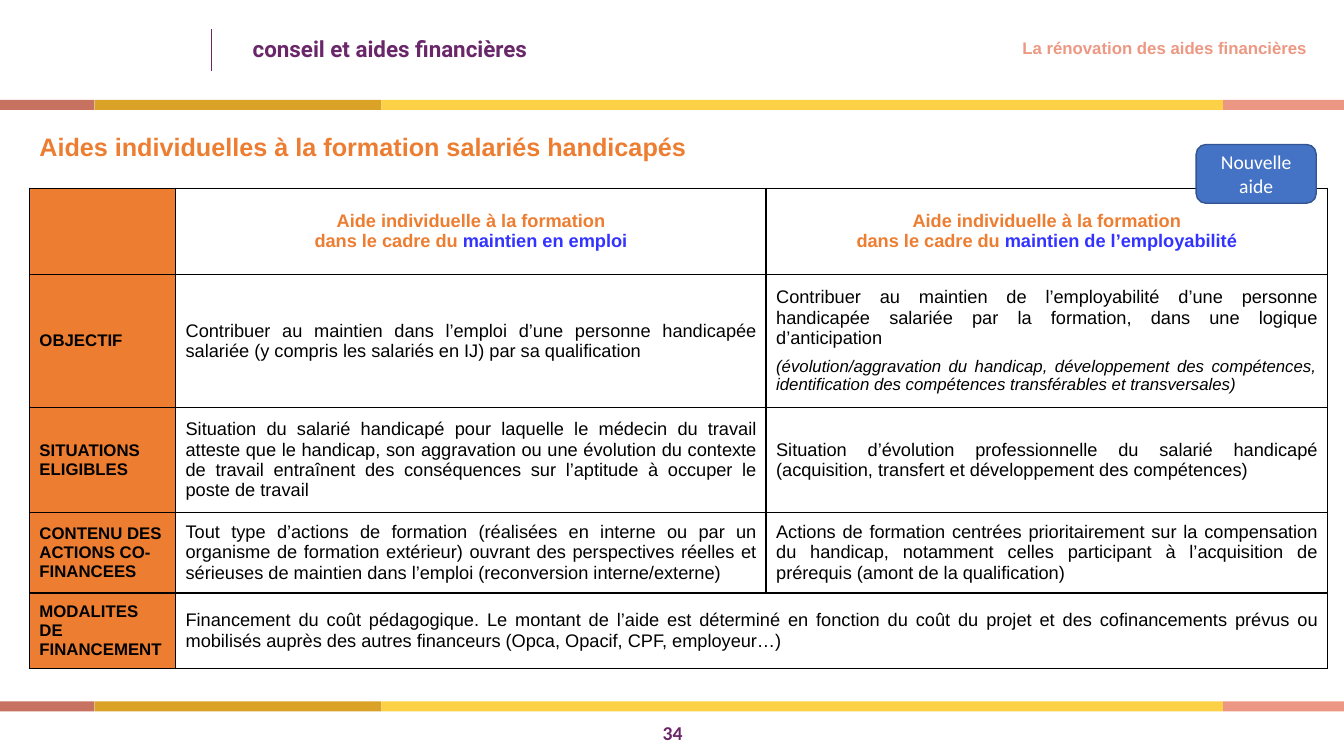
from dataclasses import dataclass, replace
from itertools import pairwise

from lxml.etree import SubElement
from pptx import Presentation
from pptx.dml.color import RGBColor
from pptx.enum.shapes import MSO_CONNECTOR, MSO_SHAPE
from pptx.enum.text import MSO_ANCHOR, PP_ALIGN
from pptx.oxml.ns import qn
from pptx.util import Inches, Pt


@dataclass(frozen=True)
class Style:
    size: float
    color: str
    font: str = "Arial"
    bold: bool = False
    italic: bool = False
    align: PP_ALIGN = PP_ALIGN.LEFT
    line_spacing: float = 1.0
    space_before: float = 0


class Theme:
    PURPLE = "69276A"
    ORANGE = "ED7D31"
    BLUE = "3333FF"
    BLACK = "000000"
    BUTTON, BUTTON_EDGE = "4472C4", "325491"
    BANDS = ("C77160", "DAA226", "FCD145", "EC9783")

    SECTION = Style(16, PURPLE, "Roboto", bold=True, line_spacing=0.9)
    PAGE = Style(14, PURPLE, "Calibri", bold=True, line_spacing=0.9)
    TOPIC = Style(12, "EC9883", bold=True, align=PP_ALIGN.RIGHT, line_spacing=0.9)
    TITLE = Style(18, ORANGE, bold=True)
    BADGE = Style(14, "FFFFFF", "Calibri", align=PP_ALIGN.CENTER)
    HEADING = Style(13, ORANGE, bold=True, align=PP_ALIGN.CENTER)
    LABEL = Style(12, BLACK, bold=True)
    BODY = Style(13, BLACK, align=PP_ALIGN.JUSTIFY)
    NOTE = replace(BODY, size=12, italic=True, space_before=6)


class SlideBuilder:
    """Places elements on a grid of 160 columns by 90 rows."""

    COLUMNS, ROWS = 160, 90

    def __init__(self, deck):
        self.column = deck.slide_width / self.COLUMNS
        self.row = deck.slide_height / self.ROWS
        self.slide = deck.slides.add_slide(deck.slide_layouts[6])

    def place(self, left, top, width, height):
        """Turn grid units into slide lengths."""
        return (round(left * self.column), round(top * self.row),
                round(width * self.column), round(height * self.row))

    def set_text(self, frame, paragraphs):
        """Fill a frame with (style, run, ...) paragraphs; a run may be (text, colour)."""
        frame.word_wrap = True
        for index, (style, *runs) in enumerate(paragraphs):
            paragraph = frame.add_paragraph() if index else frame.paragraphs[0]
            paragraph.alignment = style.align
            paragraph.line_spacing = style.line_spacing
            if index:
                paragraph.space_before = Pt(style.space_before)
            font = paragraph.font
            font.name, font.size = style.font, Pt(style.size)
            font.bold, font.italic = style.bold, style.italic
            font.color.rgb = RGBColor.from_string(style.color)
            for part in runs:
                text, color = part if isinstance(part, tuple) else (part, None)
                run = paragraph.add_run()
                run.text = text
                if color:
                    run.font.color.rgb = RGBColor.from_string(color)

    def text(self, area, style, words, anchor=MSO_ANCHOR.TOP):
        frame = self.slide.shapes.add_textbox(*self.place(*area)).text_frame
        frame.vertical_anchor = anchor
        self.set_text(frame, [(style, words)])

    def box(self, area, fill, preset=MSO_SHAPE.RECTANGLE, edge=None, label=None):
        box = self.slide.shapes.add_shape(preset, *self.place(*area))
        box.shadow.inherit = False
        box.fill.solid()
        box.fill.fore_color.rgb = RGBColor.from_string(fill)
        if edge:
            box.line.color.rgb = RGBColor.from_string(edge)
            box.line.width = Pt(1)
        else:
            box.line.fill.background()
        if label:
            box.text_frame.vertical_anchor = MSO_ANCHOR.MIDDLE
            self.set_text(box.text_frame, [label])

    def rule(self, left, top, bottom, color):
        x, start, _, length = self.place(left, top, 0, bottom - top)
        rule = self.slide.shapes.add_connector(
            MSO_CONNECTOR.STRAIGHT, x, start, x, start + length)
        rule.line.color.rgb = RGBColor.from_string(color)
        rule.line.width = Pt(0.5)
        SubElement(rule._element.spPr, qn("a:effectLst"))

    def border(self, cell, color):
        properties = cell._tc.get_or_add_tcPr()
        for position, side in enumerate(("lnL", "lnR", "lnT", "lnB")):
            line = SubElement(properties, qn(f"a:{side}"), w=str(Pt(1)))
            fill = SubElement(line, qn("a:solidFill"))
            SubElement(fill, qn("a:srgbClr"), val=color)
            properties.remove(line)
            properties.insert(position, line)

    def table(self, left, top, widths, heights, rows, label_fill):
        area = self.place(left, top, sum(widths), sum(heights))
        table = self.slide.shapes.add_table(len(heights), len(widths), *area).table
        table.first_row = table.horz_banding = False
        for column, width in zip(table.columns, widths):
            column.width = round(width * self.column)
        for row, height in zip(table.rows, heights):
            row.height = round(height * self.row)
        for r, contents in enumerate(rows):
            for c in range(len(widths)):
                cell = table.cell(r, c)
                cell.vertical_anchor = MSO_ANCHOR.MIDDLE
                if c == 0:
                    cell.fill.solid()
                    cell.fill.fore_color.rgb = RGBColor.from_string(label_fill)
                else:
                    cell.fill.background()
                self.border(cell, Theme.BLACK)
                if c < len(contents):
                    self.set_text(cell.text_frame, contents[c])
            if len(contents) < len(widths):
                table.cell(r, len(contents) - 1).merge(table.cell(r, len(widths) - 1))


def aid_heading(purpose):
    return [(Theme.HEADING, "Aide individuelle à la formation"),
            (Theme.HEADING, "dans le cadre du ", (purpose, Theme.BLUE))]


def aid_row(label, *descriptions):
    return [[(Theme.LABEL, label)], *([(Theme.BODY, words)] for words in descriptions)]


def main():
    deck = Presentation()
    deck.slide_width, deck.slide_height = Inches(13.33), Inches(7.5)
    page = SlideBuilder(deck)

    page.rule(25.2, 3.5, 8.5, Theme.PURPLE)
    page.text((28.9, 4.5, 66.7, 3), Theme.SECTION, "conseil et aides financières",
              MSO_ANCHOR.MIDDLE)
    page.text((77.7, 85.5, 6.6, 3.8), Theme.PAGE, "34", MSO_ANCHOR.MIDDLE)
    band_edges = (0, 11.25, 45.4, 145.6, 160)
    for top in (11.9, 83.5):
        for (left, right), color in zip(pairwise(band_edges), Theme.BANDS):
            page.box((left, top, right - left, 1.2), color)

    objective = aid_row(
        "OBJECTIF",
        "Contribuer au maintien dans l’emploi d’une personne handicapée salariée "
        "(y compris les salariés en IJ) par sa qualification",
        "Contribuer au maintien de l’employabilité d’une personne handicapée salariée "
        "par la formation, dans une logique d’anticipation")
    objective[2].append((
        Theme.NOTE,
        "(évolution/aggravation du handicap, développement des compétences, "
        "identification des compétences transférables et transversales)"))
    aids = [
        [[], aid_heading("maintien en emploi"), aid_heading("maintien de l’employabilité")],
        objective,
        aid_row("SITUATIONS ELIGIBLES",
                "Situation du salarié handicapé pour laquelle le médecin du travail atteste "
                "que le handicap, son aggravation ou une évolution du contexte de travail "
                "entraînent des conséquences sur l’aptitude à occuper le poste de travail",
                "Situation d’évolution professionnelle du salarié handicapé "
                "(acquisition, transfert et développement des compétences)"),
        aid_row("CONTENU DES ACTIONS CO-FINANCEES",
                "Tout type d’actions de formation (réalisées en interne ou par un organisme "
                "de formation extérieur) ouvrant des perspectives réelles et sérieuses de "
                "maintien dans l’emploi (reconversion interne/externe)",
                "Actions de formation centrées prioritairement sur la compensation du "
                "handicap, notamment celles participant à l’acquisition de prérequis "
                "(amont de la qualification)"),
        aid_row("MODALITES DE FINANCEMENT",
                "Financement du coût pédagogique. Le montant de l’aide est déterminé en "
                "fonction du coût du projet et des cofinancements prévus ou mobilisés auprès "
                "des autres financeurs (Opca, Opacif, CPF, employeur…)"),
    ]
    page.table(3.5, 22.4, (17.4, 70.3, 66.8), (10.3, 15.8, 12.5, 9.6, 9), aids, Theme.ORANGE)

    page.text((88.6, 4.2, 68.2, 3.5), Theme.TOPIC, "La rénovation des aides financières")
    page.box((142.4, 17.2, 14.3, 7), Theme.BUTTON, MSO_SHAPE.ROUNDED_RECTANGLE,
             Theme.BUTTON_EDGE, (Theme.BADGE, "Nouvelle aide"))
    page.text((3.5, 15, 93.8, 4.8), Theme.TITLE,
              "Aides individuelles à la formation salariés handicapés")
    deck.save("out.pptx")


if __name__ == "__main__":
    main()
